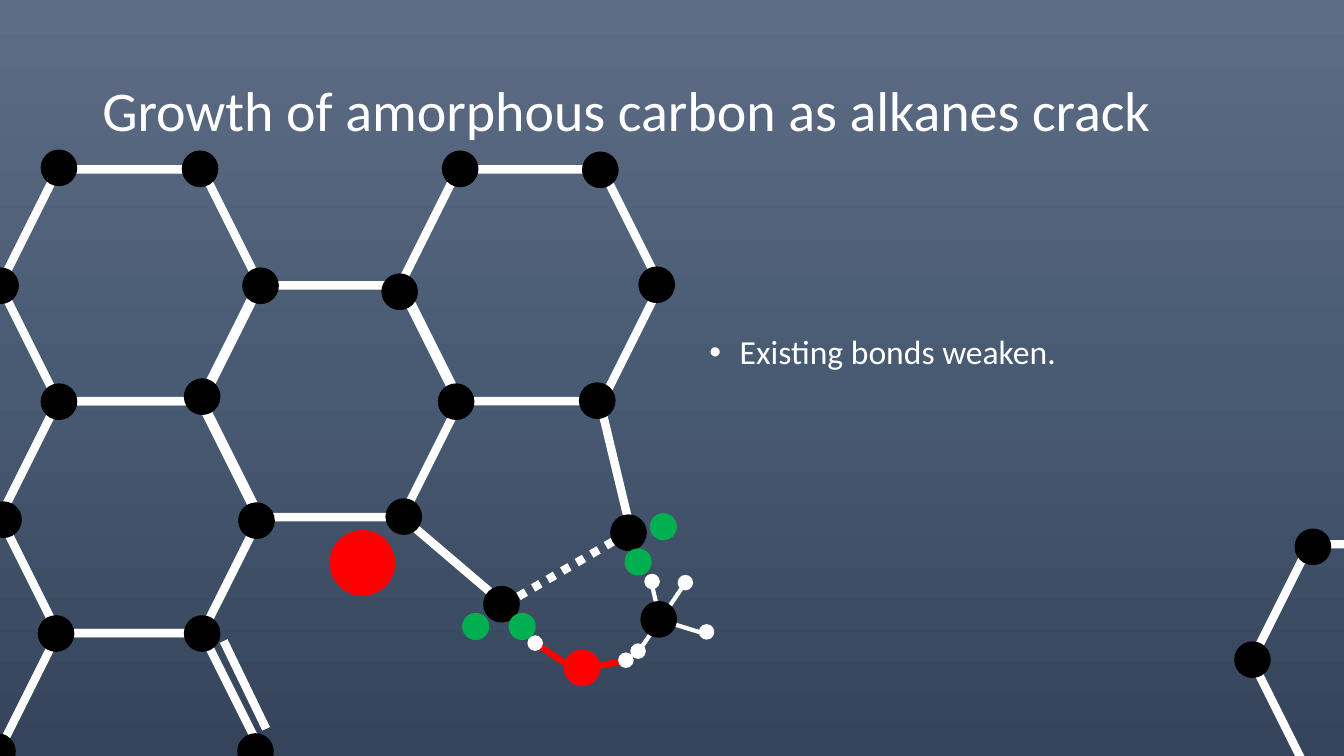
from copy import deepcopy
from dataclasses import dataclass

from lxml.etree import SubElement
from pptx import Presentation
from pptx.dml.color import RGBColor
from pptx.enum.dml import MSO_LINE
from pptx.enum.shapes import MSO_CONNECTOR, MSO_SHAPE
from pptx.enum.text import MSO_ANCHOR
from pptx.oxml.ns import qn
from pptx.slide import Slide
from pptx.util import Pt


@dataclass(frozen=True)
class Theme:
    font: str = "Calibri"
    title_size: float = 40
    body_size: float = 24
    white: str = "FFFFFF"
    carbon: str = "000000"
    oxygen: str = "FF0000"
    electron: str = "00B050"
    background: tuple[str, ...] = ("5E6D85", "495A73", "35445A")


THEME = Theme()


@dataclass(frozen=True)
class Bond:
    start: tuple[float, float]
    end: tuple[float, float]
    weight: float = 6
    color: str = THEME.white
    dotted: bool = False


@dataclass(frozen=True)
class AtomGroup:
    diameter: float
    color: str
    centers: tuple[tuple[float, float], ...]


RING_WIDTH, RING_HEIGHT = 185.8, 165.6
RING_STEP, RING_TOP = 142.9, 121
LATTICE_CELLS = ((2, 0), (1, 1), (0, 2), (0, 4), (0, 0))
RINGS = [
    (column * RING_STEP, RING_TOP + half_row * RING_HEIGHT / 2)
    for column, half_row in LATTICE_CELLS
] + [(894.2, 388.8)]

METHANE_CENTER = (471.6, 442.8)
WATER_CENTER = (411.1, 478.8)
METHANE_ENDS = ((465.1, 415.4), (454.3, 468), (501.8, 452.2), (489.6, 416.2))
WATER_ENDS = ((380.2, 457.9), (452.2, 470.9))

BONDS = [
    Bond((287.3, 369.4), (360, 431.3)),
    Bond((428.4, 286.6), (450.7, 379.4)),
    Bond((360, 432), (450.7, 379.4), dotted=True),
    Bond((159.8, 457.9), (190.1, 520.6)),
    *(Bond(METHANE_CENTER, end, 3) for end in METHANE_ENDS),
    *(Bond(WATER_CENTER, end, 4.5, THEME.oxygen) for end in WATER_ENDS),
]

ATOM_GROUPS = (
    AtomGroup(25.2, THEME.carbon, (
        (42.1, 119.9), (142.9, 120.6), (328.7, 120.6), (428.8, 121.3),
        (0.4, 204.1), (186.1, 204.1), (285.5, 208.4), (469.1, 203.4),
        (42.1, 286.9), (144.4, 283.3), (325.8, 286.9), (426.6, 286.2),
        (2.5, 371.2), (183.2, 371.9), (288.4, 369), (448.9, 380.5),
        (40, 452.5), (144.4, 452.5), (358.2, 431.6), (470.5, 442.4),
        (-1.8, 536.8), (182.5, 536.8), (894.6, 471.2), (937.8, 390.6),
    )),
    AtomGroup(25.2, THEME.oxygen, ((415.8, 477),)),
    AtomGroup(10.1, THEME.white, (
        (465.8, 415.4), (489.6, 416.2), (504.7, 451.4),
        (455.8, 465.1), (447.1, 471.6), (382.3, 459.4),
    )),
    AtomGroup(46, THEME.oxygen, ((258.8, 402.1),)),
    AtomGroup(18.4, THEME.electron, (
        (339.8, 447.5), (373, 447.5), (455.8, 401.4), (473.8, 376.2),
    )),
)


def paint_background(page: Slide) -> None:
    fill = page.background.fill
    fill.gradient()
    fill.gradient_angle = 270
    stop_list = page.element.xpath(".//a:gsLst")[0]
    stop_list.append(deepcopy(stop_list[-1]))
    for index, (stop, color) in enumerate(zip(fill.gradient_stops, THEME.background)):
        stop.position = index / 2
        stop.color.rgb = RGBColor.from_string(color)


def draw_ring(page: Slide, left: float, top: float) -> None:
    ring = page.shapes.add_shape(
        MSO_SHAPE.HEXAGON, Pt(left), Pt(top), Pt(RING_WIDTH), Pt(RING_HEIGHT)
    )
    ring.shadow.inherit = False
    ring.fill.background()
    ring.line.color.rgb = RGBColor.from_string(THEME.white)
    ring.line.width = Pt(6)


def draw_bond(page: Slide, bond: Bond) -> None:
    connector = page.shapes.add_connector(
        MSO_CONNECTOR.STRAIGHT, *(Pt(value) for value in bond.start + bond.end)
    )
    connector.line.color.rgb = RGBColor.from_string(bond.color)
    connector.line.width = Pt(bond.weight)
    if bond.dotted:
        connector.line.dash_style = MSO_LINE.ROUND_DOT
    SubElement(connector.element.spPr, qn("a:effectLst"))


def draw_atoms(page: Slide, group: AtomGroup) -> None:
    size = Pt(group.diameter)
    color = RGBColor.from_string(group.color)
    for x, y in group.centers:
        atom = page.shapes.add_shape(
            MSO_SHAPE.OVAL, Pt(x) - size // 2, Pt(y) - size // 2, size, size
        )
        atom.shadow.inherit = False
        atom.fill.solid()
        atom.fill.fore_color.rgb = color
        atom.line.color.rgb = color
        atom.line.width = Pt(1)


def add_text(
    page: Slide,
    text: str,
    *,
    left: float,
    top: float,
    width: float,
    height: float,
    size: float,
    anchor: MSO_ANCHOR = MSO_ANCHOR.TOP,
    space_before: float = 0,
    bullet: str = "",
) -> None:
    box = page.shapes.add_textbox(Pt(left), Pt(top), Pt(width), Pt(height))
    frame = box.text_frame
    frame.word_wrap = True
    frame.vertical_anchor = anchor
    para = frame.paragraphs[0]
    para.line_spacing = 0.9
    para.space_before = Pt(space_before)
    if bullet:
        properties = para._p.get_or_add_pPr()
        properties.set("marL", str(Pt(21.6)))
        properties.set("indent", str(-Pt(21.6)))
        SubElement(properties, qn("a:buFont"), typeface="Arial")
        SubElement(properties, qn("a:buChar"), char=bullet)
    span = para.add_run()
    span.text = text
    span.font.name = THEME.font
    span.font.size = Pt(size)
    span.font.color.rgb = RGBColor.from_string(THEME.white)


def main() -> None:
    deck = Presentation()
    deck.slide_width, deck.slide_height = Pt(960), Pt(540)
    page = deck.slides.add_slide(deck.slide_layouts[6])
    paint_background(page)
    for left, top in RINGS:
        draw_ring(page, left, top)
    for bond in BONDS:
        draw_bond(page, bond)
    for group in ATOM_GROUPS:
        draw_atoms(page, group)
    add_text(
        page, "Existing bonds weaken.", left=499.7, top=236.2, width=478, height=149.8,
        size=THEME.body_size, space_before=20, bullet="•",
    )
    add_text(
        page, "Growth of amorphous carbon as alkanes crack", left=66, top=28.8,
        width=828, height=104.4, size=THEME.title_size, anchor=MSO_ANCHOR.MIDDLE,
    )
    deck.save("out.pptx")


if __name__ == "__main__":
    main()
